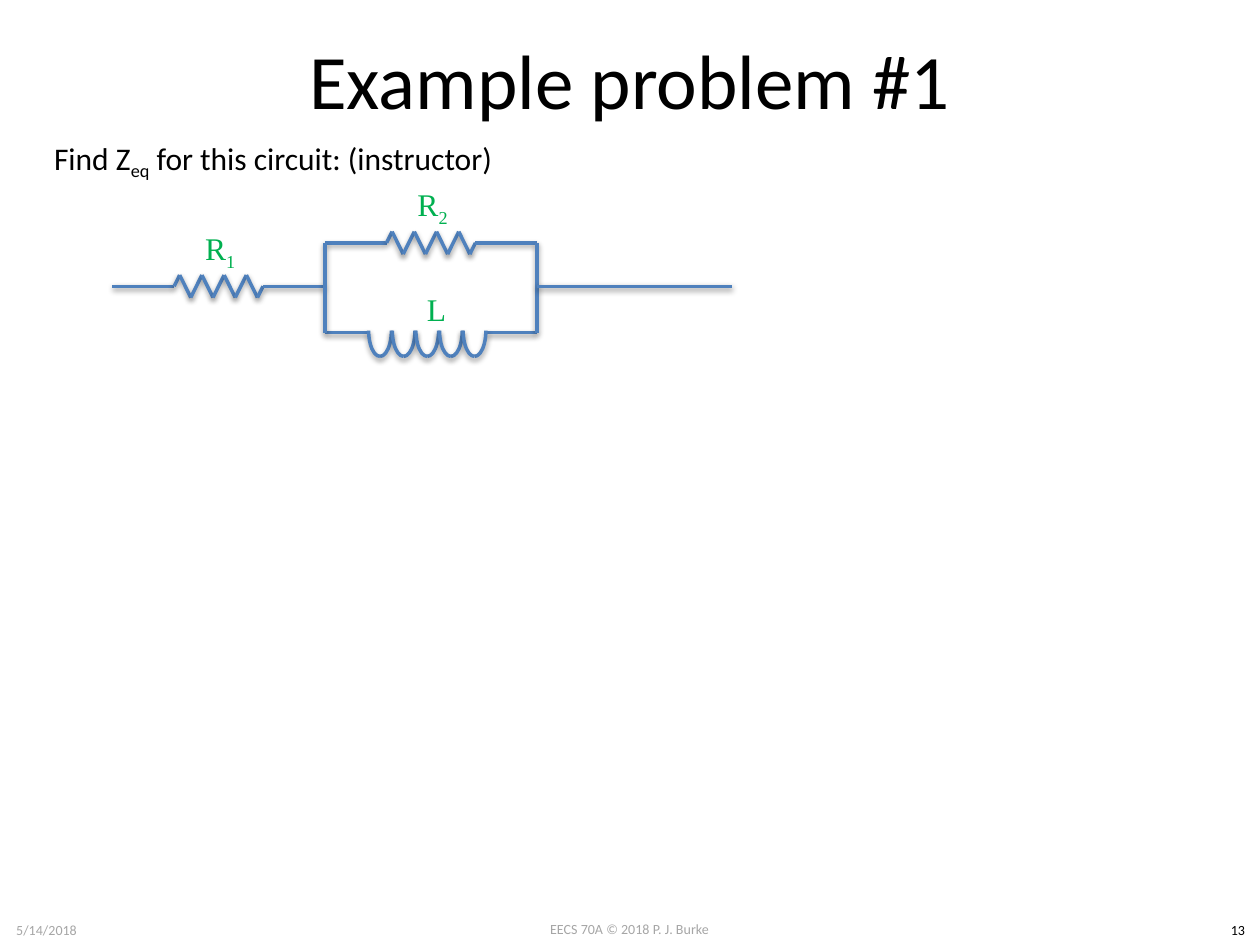
from lxml import etree
from pptx import Presentation
from pptx.dml.color import RGBColor
from pptx.enum import shapes, text
from pptx.oxml import ns
from pptx.util import Pt

BLUE, GREEN, BLACK, GRAY = "4F81BD", "00B050", "000000", "A6A6A6"
LEFT, MIDDLE, RIGHT, END = 64.2, 185.6, 307, 418.3
MAIN_Y, TOP_Y, BOTTOM_Y = 163.6, 138.8, 190.1
CENTER = text.PP_ALIGN.CENTER


def color(value):
    return RGBColor.from_string(value)


def add_child(parent, tag, **attributes):
    element = etree.SubElement(parent, ns.qn(tag))
    for name, value in attributes.items():
        element.set(name, str(value))
    return element


def style_stroke(shape):
    shape.line.color.rgb = color(BLUE)
    shape.line.width = Pt(2)
    effects = add_child(shape._element.spPr, "a:effectLst")
    shadow = add_child(effects, "a:outerShdw", blurRad=Pt(3.15), dist=Pt(1.57),
                       dir=5400000, rotWithShape=0)
    shade = add_child(shadow, "a:srgbClr", val=BLACK)
    add_child(shade, "a:alpha", val=38000)


def add_wire(container, x1, y1, x2, y2):
    wire = container.shapes.add_connector(
        shapes.MSO_CONNECTOR.STRAIGHT, Pt(x1), Pt(y1), Pt(x2), Pt(y2))
    style_stroke(wire)


def add_text(container, box, parts, size, fill, font="Calibri", align=CENTER,
             anchor=text.MSO_ANCHOR.TOP):
    frame = container.shapes.add_textbox(*map(Pt, box)).text_frame
    frame.word_wrap = True
    frame.vertical_anchor = anchor
    paragraph = frame.paragraphs[0]
    paragraph.alignment = align
    for index, part in enumerate(parts):
        run = paragraph.add_run()
        run.text = part
        run.font.size = Pt(size)
        run.font.name = font
        run.font.color.rgb = color(fill)
        if index % 2:
            run._r.get_or_add_rPr().set("baseline", "-25000")


def add_label(container, center, top, parts):
    width, height = 85.6, 52.6
    add_text(container, (center - width / 2, top, width, height), parts, 18, GREEN,
             "Times New Roman", anchor=text.MSO_ANCHOR.MIDDLE)


def add_resistor(slide, left, right, y, label):
    step, amplitude, peaks = 6.35, 6.4, 8
    group = slide.shapes.add_group_shape()
    center = (left + right) / 2
    start = center - peaks * step / 2
    add_label(group, center + 0.9, y - 46.9, label)
    points = [(left, y), (start, y)]
    for index in range(peaks):
        offset = amplitude if index % 2 else -amplitude
        points.append((start + (index + 0.5) * step, y + offset))
    points += [(start + peaks * step, y), (right, y)]
    for begin, end in zip(points, points[1:]):
        add_wire(group, *begin, *end)


def add_inductor(slide, left, right, y, label):
    lead, pitch, loops, length, thickness = 25.2, 13.5, 5, 29.5, 13
    group = slide.shapes.add_group_shape()
    coil_end = left + lead + loops * pitch
    add_wire(group, left, y, left + lead, y)
    add_wire(group, coil_end, y, right, y)
    for index in range(loops):
        center = left + lead + (index + 0.5) * pitch - 0.4
        for flipped in (False, True):
            arc = group.shapes.add_shape(
                shapes.MSO_SHAPE.ARC, Pt(center - length / 2),
                Pt(y - 1.2 - thickness / 2), Pt(length), Pt(thickness))
            arc.rotation = 90
            arc.fill.background()
            style_stroke(arc)
            if flipped:
                arc._element.spPr.find(ns.qn("a:xfrm")).set("flipV", "1")
    add_label(slide, (left + right) / 2 + 3.2, y - 39.6, label)


def add_circuit(slide):
    add_resistor(slide, LEFT, MIDDLE, MAIN_Y, ["R", "1"])
    add_resistor(slide, MIDDLE, RIGHT, TOP_Y, ["R", "2"])
    add_inductor(slide, MIDDLE, RIGHT, BOTTOM_Y, ["L"])
    for x in (MIDDLE, RIGHT):
        add_wire(slide, x, TOP_Y, x, BOTTOM_Y)
    add_wire(slide, RIGHT, MAIN_Y, END, MAIN_Y)


def add_heading(slide):
    add_text(slide, (36, 0, 648, 90), ["Example problem #1"], 44, BLACK,
             anchor=text.MSO_ANCHOR.MIDDLE)
    add_text(slide, (23.8, 75.6, 327.6, 29), ["Find Z", "eq", " for this circuit: (instructor)"],
             18, BLACK, align=text.PP_ALIGN.LEFT)


def add_footer(slide):
    add_text(slide, (275.8, 522.7, 168, 17), ["EECS 70A © 2018 P. J. Burke"], 8, GRAY)
    add_text(slide, (0, 523.2, 53.3, 17), ["5/14/2018"], 8, GRAY)
    add_text(slide, (694.8, 523.2, 25.2, 17), ["13"], 8, BLACK)


def main():
    presentation = Presentation()
    presentation.slide_width, presentation.slide_height = Pt(720), Pt(540)
    slide = presentation.slides.add_slide(presentation.slide_layouts[6])
    add_footer(slide)
    add_heading(slide)
    add_circuit(slide)
    presentation.save("out.pptx")


if __name__ == "__main__":
    main()
